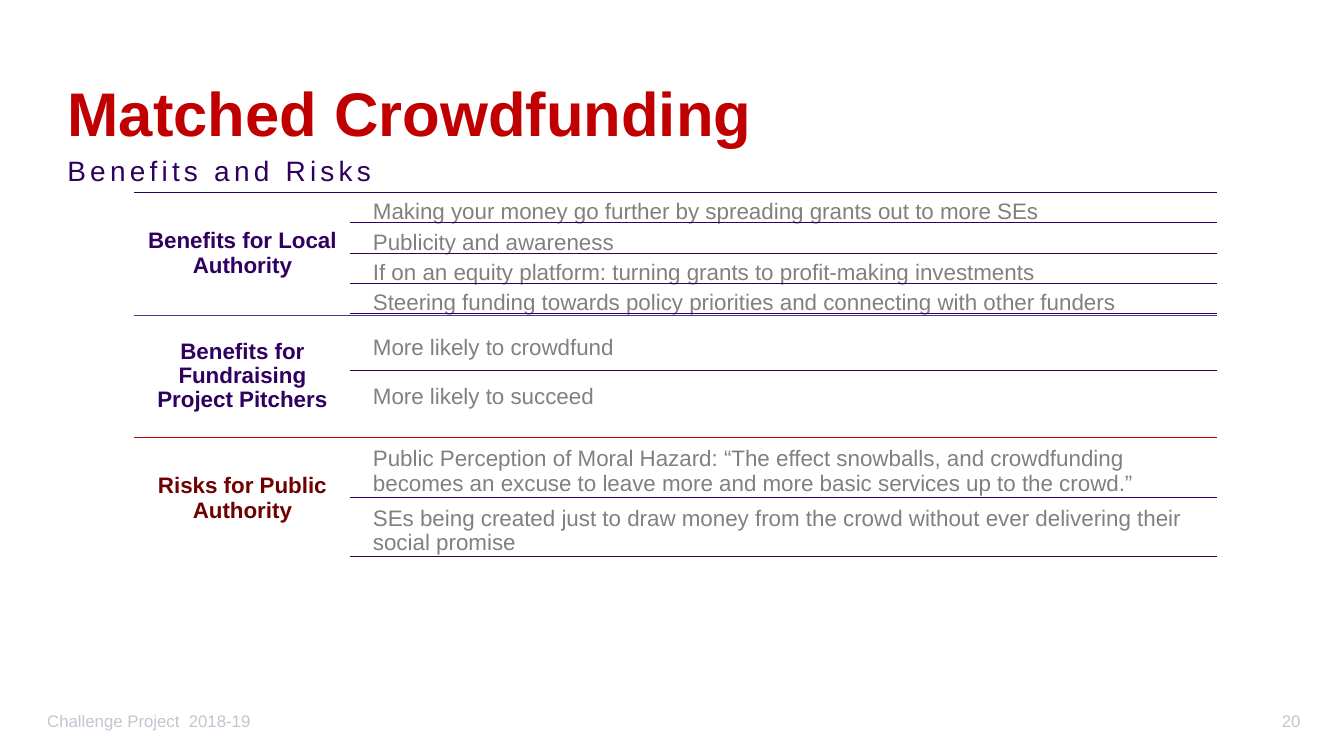
import pptx
import pptx.dml.color
import pptx.enum.shapes
import pptx.enum.text
import pptx.oxml
import pptx.util

# Grid: 133.3 columns by 75 rows, each a tenth of an inch
CELL = 0.1
COLUMNS, ROWS = 133.33, 75

TABLE_LEFT, RULE_LEFT, TABLE_RIGHT = 13.3, 34.7, 120.7
TABLE_TOP, SECTION_ROWS = 19.1, 12.15
LABEL_COLUMNS = 21.5
ITEM_LEFT, ITEM_COLUMNS = 36.3, 84.3
TABLE_INSETS = (0.7, 0.7, 0.7, 0.7)

PURPLE, GRAY, PALE = "300061", "808080", "C9C2D1"
RED, DARK_RED = "C00000", "700000"

# Rows in each section: gap above the items, pitch, first rule, number of rules
SECTIONS = [
    dict(label="Benefits for Local Authority", color=PURPLE, rule_color="2C0058",
         gap=0.1, pitch=3, first_rule=3, rules=4,
         items=["Making your money go further by spreading grants out to more SEs",
                "Publicity and awareness",
                "If on an equity platform: turning grants to profit-making investments",
                "Steering funding towards policy priorities and connecting with other funders"]),
    dict(label="Benefits for Fundraising Project Pitchers", color=PURPLE, rule_color="582E9C",
         gap=1.4, pitch=4.9, first_rule=5.5, rules=1,
         items=["More likely to crowdfund", "More likely to succeed"]),
    dict(label="Risks for Public Authority", color=DARK_RED, rule_color=RED,
         gap=0.3, pitch=5.9, first_rule=5.9, rules=2,
         items=["Public Perception of Moral Hazard: “The effect snowballs, and crowdfunding "
                "becomes an excuse to leave more and more basic services up to the crowd.”",
                "SEs being created just to draw money from the crowd without ever delivering "
                "their social promise"]),
]


def grid(cells):
    return pptx.util.Inches(cells * CELL)


def color_of(hex_string):
    return pptx.dml.color.RGBColor.from_string(hex_string)


def write_text(shape, text, size, color, bold=False, align="LEFT", anchor="TOP",
               insets=(1, 0.5, 1, 0.5), line_spacing=0.9, space_before=0, tracking=0):
    frame = shape.text_frame
    frame.word_wrap = True
    frame.auto_size = pptx.enum.text.MSO_AUTO_SIZE.NONE
    frame.vertical_anchor = pptx.enum.text.MSO_ANCHOR[anchor]
    (frame.margin_left, frame.margin_top,
     frame.margin_right, frame.margin_bottom) = map(grid, insets)
    paragraph = frame.paragraphs[0]
    paragraph.alignment = pptx.enum.text.PP_ALIGN[align]
    paragraph.line_spacing = line_spacing
    paragraph.space_before = pptx.util.Pt(space_before)
    run = paragraph.add_run()
    run.text = text
    run.font.name = "Arial"
    run.font.size = pptx.util.Pt(size)
    run.font.bold = bold
    run.font.color.rgb = color_of(color)
    if tracking:
        run.font._element.set("spc", str(tracking * 100))


def add_text(slide, left, top, width, height, text, **text_format):
    box = slide.shapes.add_textbox(*map(grid, (left, top, width, height)))
    write_text(box, text, **text_format)


def add_rule(slide, left, top, color):
    rule = slide.shapes.add_connector(
        pptx.enum.shapes.MSO_CONNECTOR.STRAIGHT,
        *map(grid, (left, top, TABLE_RIGHT, top)))
    rule.line.color.rgb = color_of(color)
    rule.line.width = pptx.util.Pt(0.5)
    namespace = pptx.oxml.ns.nsdecls("a")
    rule._element.spPr.append(pptx.oxml.parse_xml(f"<a:effectLst {namespace}/>"))


def add_title(slide, text):
    title = slide.shapes.title
    title.left, title.top, title.width, title.height = map(grid, (5.7, 2.3, 91.1, 12.6))
    write_text(title, text, size=44, color=RED, bold=True, anchor="BOTTOM",
               insets=(1, 0.5, 1, 0))


def add_section(slide, top, section):
    add_rule(slide, TABLE_LEFT, top, section["rule_color"])
    add_text(slide, TABLE_LEFT, top, LABEL_COLUMNS, SECTION_ROWS, section["label"],
             size=16, color=section["color"], bold=True, align="CENTER",
             anchor="MIDDLE", insets=TABLE_INSETS)
    pitch = section["pitch"]
    for index, item in enumerate(section["items"]):
        add_text(slide, ITEM_LEFT, top + section["gap"] + index * pitch,
                 ITEM_COLUMNS, pitch, item, size=16, color=GRAY, insets=TABLE_INSETS)
    for index in range(section["rules"]):
        add_rule(slide, RULE_LEFT, top + section["first_rule"] + index * pitch, PURPLE)


def main():
    presentation = pptx.Presentation()
    presentation.slide_width = grid(COLUMNS)
    presentation.slide_height = grid(ROWS)
    slide = presentation.slides.add_slide(presentation.slide_layouts.get_by_name("Title Only"))

    # Heading
    add_title(slide, "Matched Crowdfunding")
    add_text(slide, 5.7, 15.1, 80.6, 6.7, "Benefits and Risks",
             size=20, color=PURPLE, space_before=10, tracking=3)

    # Benefits and risks
    for index, section in enumerate(SECTIONS):
        add_section(slide, TABLE_TOP + index * SECTION_ROWS, section)

    # Footer
    footer_format = dict(size=12, color=PALE, anchor="MIDDLE", line_spacing=1)
    add_text(slide, 3.7, 69.5, 45, 4, "Challenge Project  2018-19", **footer_format)
    add_text(slide, 121.9, 69.5, 8.1, 4, "20", align="RIGHT", **footer_format)

    presentation.save("out.pptx")


if __name__ == "__main__":
    main()
